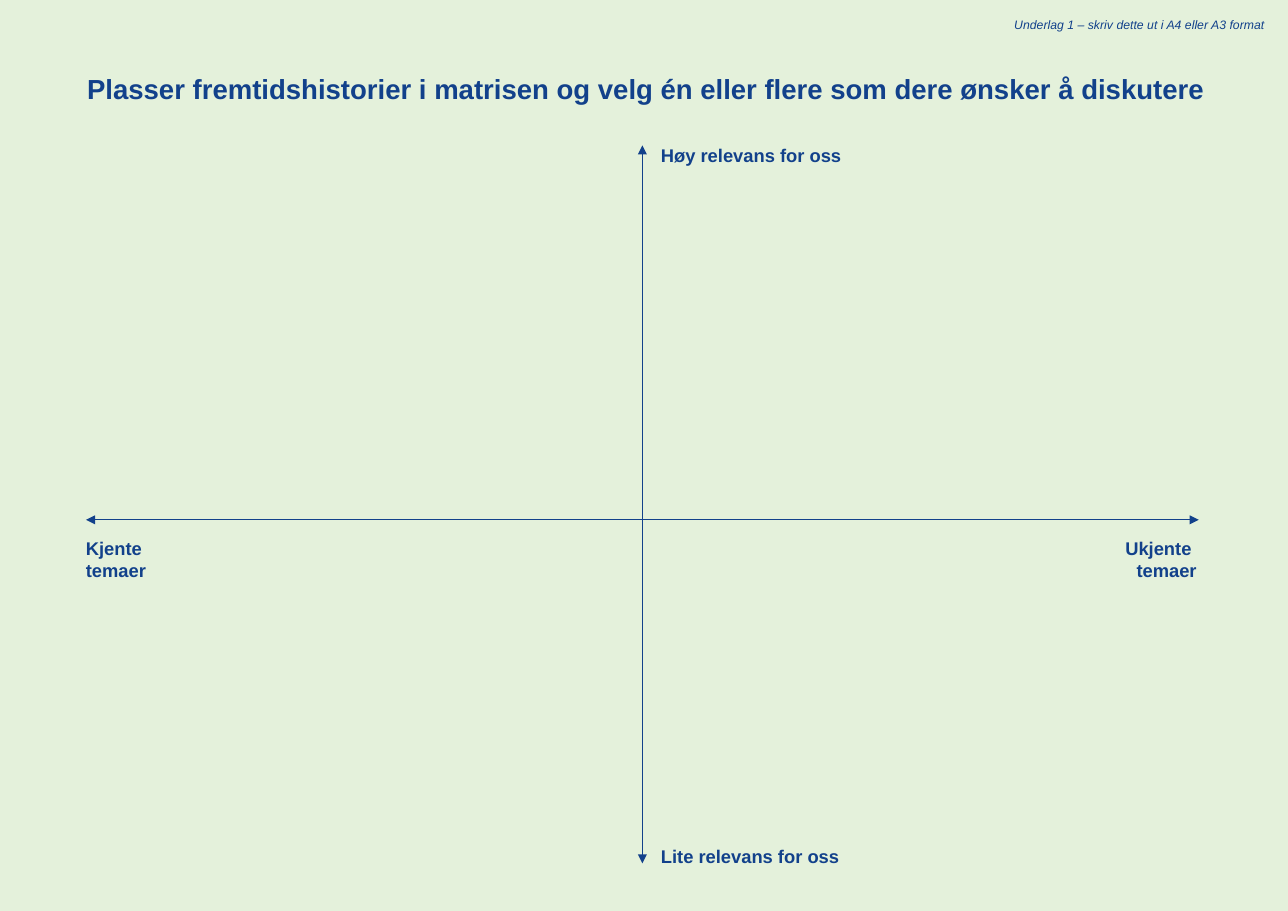
from lxml.etree import SubElement
from pptx import Presentation
from pptx.dml.color import RGBColor
from pptx.enum.shapes import MSO_CONNECTOR
from pptx.enum.text import MSO_AUTO_SIZE, PP_ALIGN
from pptx.oxml.ns import qn
from pptx.util import Pt

NAVY = RGBColor(0x12, 0x41, 0x8B)
PALE_GREEN = RGBColor(0xE4, 0xF1, 0xDB)
FONT = "Arial"
SLIDE_WIDTH, SLIDE_HEIGHT = 841.68, 595.44
LABEL_INSET = 7.2
HEADING_INSET = 7.92


def add_text(slide, box, paragraphs, size, inset=LABEL_INSET,
             alignment=PP_ALIGN.LEFT, bold=True, italic=False):
    shape = slide.shapes.add_textbox(*[Pt(length) for length in box])
    frame = shape.text_frame
    frame.word_wrap = True
    frame.auto_size = MSO_AUTO_SIZE.SHAPE_TO_FIT_TEXT
    frame.margin_left = frame.margin_right = Pt(inset)
    frame.margin_top = frame.margin_bottom = Pt(inset)
    for index, text in enumerate(paragraphs):
        paragraph = frame.add_paragraph() if index else frame.paragraphs[0]
        paragraph.alignment = alignment
        run = paragraph.add_run()
        run.text = text
        run.font.name = FONT
        run.font.size = Pt(size)
        run.font.bold = bold
        run.font.italic = italic
        run.font.color.rgb = NAVY


def add_axis(slide, *ends):
    """Draw a line with an arrowhead at both ends: x1, y1, x2, y2."""
    axis = slide.shapes.add_connector(
        MSO_CONNECTOR.STRAIGHT, *[Pt(length) for length in ends])
    axis.line.color.rgb = NAVY
    axis.line.width = Pt(0.75)
    for end in ("a:headEnd", "a:tailEnd"):
        SubElement(axis.line._get_or_add_ln(), qn(end), type="triangle")
    SubElement(axis._element.spPr, qn("a:effectLst"))


def add_heading(slide, left, top, width):
    note_width = 205.2
    add_text(slide, (left + width - note_width, top, note_width, 25.92),
             ["Underlag 1 – skriv dette ut i A4 eller A3 format"], 8,
             HEADING_INSET, PP_ALIGN.RIGHT, bold=False, italic=True)
    add_text(slide, (left, top + 32.4, 764, 38.16),
             ["Plasser fremtidshistorier i matrisen og velg én eller flere "
              "som dere ønsker å diskutere"], 18, HEADING_INSET)


def add_matrix(slide, left, top, width, height):
    right, bottom = left + width, top + height
    center_x = left + width / 2
    axis_y = top + 244.8
    add_axis(slide, center_x, top, center_x, bottom)
    add_axis(slide, right, axis_y, left, axis_y)

    for label_top, text in ((top - 7.9, "Høy relevans for oss"),
                            (bottom - 19.4, "Lite relevans for oss")):
        add_text(slide, (center_x + 5, label_top, 134, 28.8), [text], 12)

    label_top, label_height = axis_y + 4.3, 43.92
    add_text(slide, (left - LABEL_INSET, label_top, 75.6, label_height),
             ["Kjente temaer"], 12)
    right_width = 113.8
    add_text(slide, (right + 5.7 - right_width, label_top,
                     right_width, label_height),
             ["Ukjente ", "temaer"], 12, alignment=PP_ALIGN.RIGHT)


def main():
    presentation = Presentation()
    presentation.slide_width = Pt(SLIDE_WIDTH)
    presentation.slide_height = Pt(SLIDE_HEIGHT)
    slide = presentation.slides.add_slide(presentation.slide_layouts[6])
    slide.background.fill.solid()
    slide.background.fill.fore_color.rgb = PALE_GREEN
    add_heading(slide, 49, 6.5, 785.5)
    add_matrix(slide, 56.2, 95, 727.2, 469.4)
    presentation.save("out.pptx")


if __name__ == "__main__":
    main()
